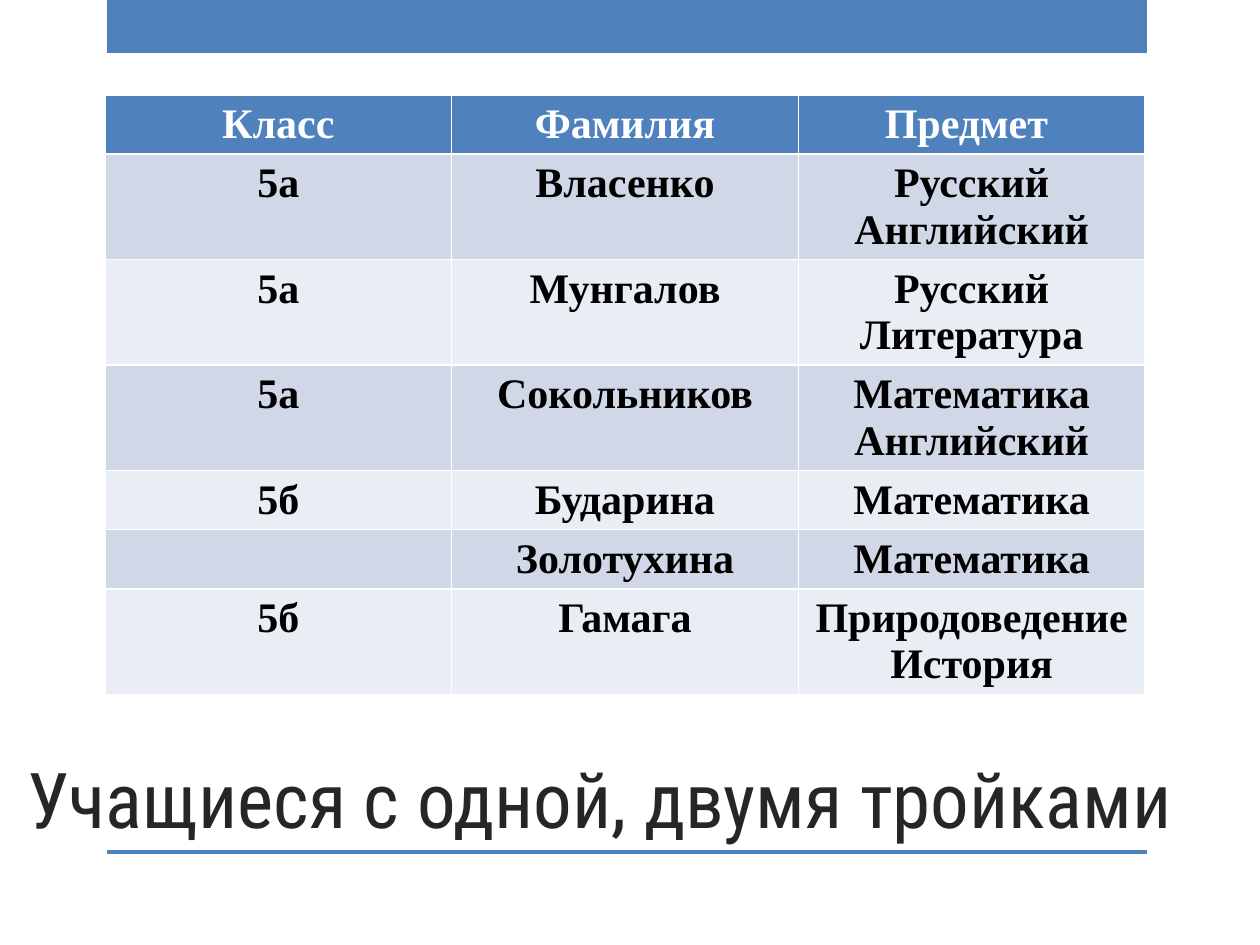
from dataclasses import dataclass

from pptx import Presentation
from pptx.dml.color import RGBColor
from pptx.enum.shapes import MSO_SHAPE as Shape
from pptx.enum.text import MSO_ANCHOR as Anchor, MSO_AUTO_SIZE as AutoSize, PP_ALIGN as Align
from pptx.util import Pt

EMU_PER_PX = 914400 / 126


def px(*lengths):
    return [round(length * EMU_PER_PX) for length in lengths]


@dataclass(frozen=True)
class Theme:
    accent: str = "4F81BD"
    bands: tuple = ("D0D8E8", "E9EDF4")
    title_color: str = "262626"
    header_color: str = "FFFFFF"
    body_color: str = "000000"
    title_font: str = "Roboto Condensed"
    table_font: str = "Times New Roman"
    title_size: int = 44
    table_size: int = 24


class SlideBuilder:
    def __init__(self, deck, theme):
        self.theme = theme
        self.page = deck.slides.add_slide(deck.slide_layouts[5])

    def style(self, para, font, size, color, align, bold=False):
        para.alignment = align
        para.font.name = font
        para.font.size = Pt(size)
        para.font.bold = bold
        para.font.color.rgb = RGBColor.from_string(color)

    def bar(self, left, top, width, height):
        box = self.page.shapes.add_shape(Shape.RECTANGLE, *px(left, top, width, height))
        box.shadow.inherit = False
        box.fill.solid()
        box.fill.fore_color.rgb = RGBColor.from_string(self.theme.accent)
        box.line.fill.background()

    def title(self, text, left, top, width, height):
        theme = self.theme
        box = self.page.shapes.title
        box.left, box.top, box.width, box.height = px(left, top, width, height)
        frame = box.text_frame
        frame.text = text
        frame.auto_size = AutoSize.NONE
        frame.vertical_anchor = Anchor.BOTTOM
        self.style(frame.paragraphs[0], theme.title_font, theme.title_size,
                   theme.title_color, Align.LEFT)

    def table(self, rows, left, top, width, line_height, padding):
        heights = [padding + line_height * max(text.count("\n") + 1 for text in row)
                   for row in rows]
        frame = self.page.shapes.add_table(len(rows), len(rows[0]),
                                           *px(left, top, width, sum(heights)))
        for index, (row, height) in enumerate(zip(rows, heights)):
            frame.table.rows[index].height = px(height)[0]
            for column, text in enumerate(row):
                self.cell(frame.table.cell(index, column), text, index)

    def cell(self, cell, text, row):
        theme = self.theme
        fill = theme.bands[(row - 1) % 2] if row else theme.accent
        color = theme.body_color if row else theme.header_color
        cell.fill.solid()
        cell.fill.fore_color.rgb = RGBColor.from_string(fill)
        cell.text = text
        for para in cell.text_frame.paragraphs:
            self.style(para, theme.table_font, theme.table_size, color, Align.CENTER, True)


STUDENTS = [
    ("Класс", "Фамилия", "Предмет "),
    ("5а", "Власенко", "Русский\nАнглийский"),
    ("5а", "Мунгалов", "Русский\nЛитература"),
    ("5а", "Сокольников", "Математика\nАнглийский"),
    ("5б", "Бударина", "Математика"),
    ("", "Золотухина", "Математика"),
    ("5б", "Гамага", "Природоведение\nИстория"),
]


def main():
    deck = Presentation()
    deck.slide_width, deck.slide_height = px(1260, 945)
    slide = SlideBuilder(deck, Theme())
    slide.bar(107, 0, 1040, 53)
    slide.bar(107, 850, 1040, 4)
    slide.title("Учащиеся с одной, двумя тройками", 15, 630, 1245, 220)
    slide.table(STUDENTS, 105, 95, 1040, line_height=46, padding=13)
    deck.save("out.pptx")


if __name__ == "__main__":
    main()
